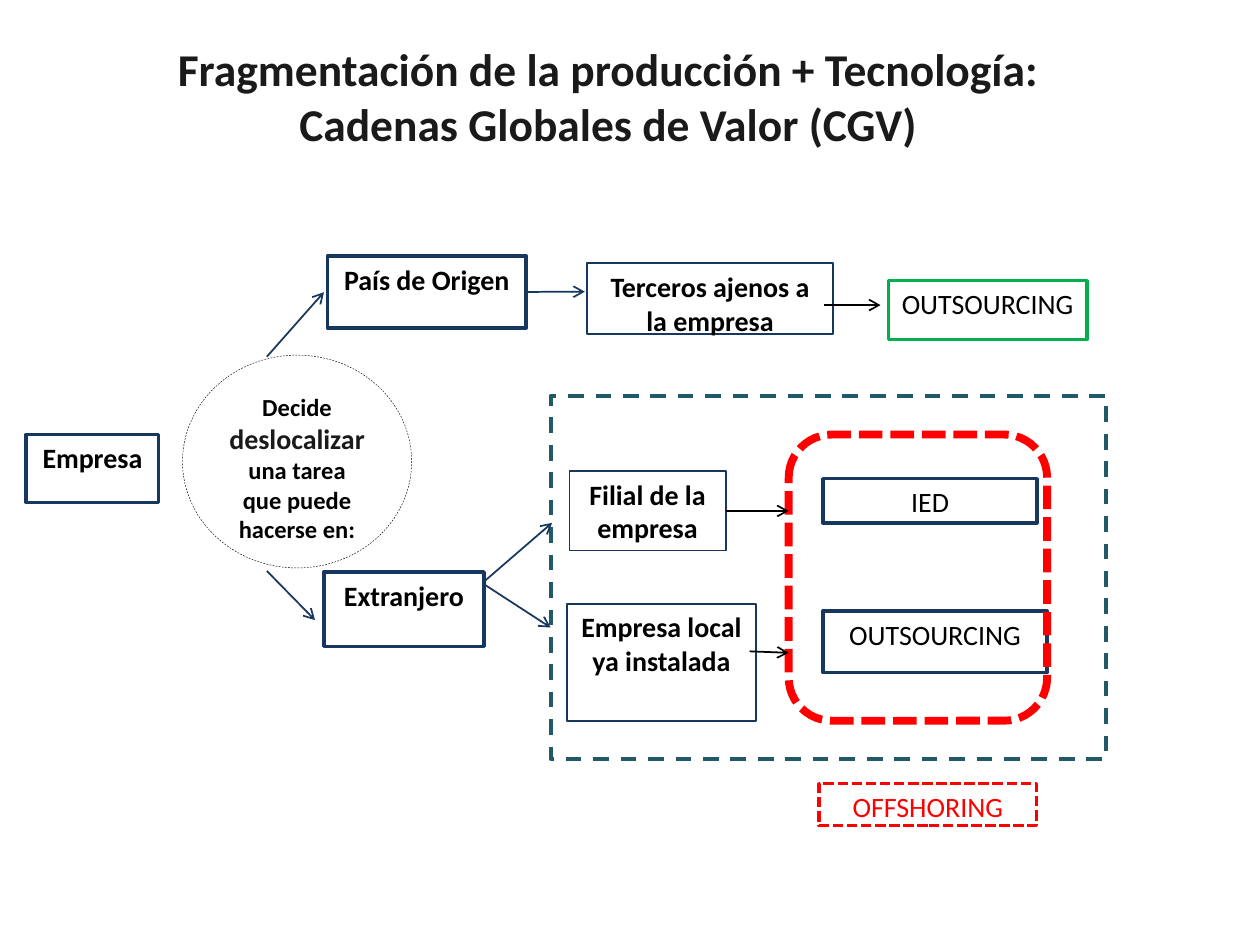
import pptx
import pptx.util
import pptx.dml.color
import pptx.enum.dml
import pptx.enum.shapes
import pptx.enum.text
import pptx.oxml
import pptx.oxml.ns
from pptx.util import Cm, Pt

RGBColor = pptx.dml.color.RGBColor
SHAPE = pptx.enum.shapes.MSO_SHAPE
DASH = pptx.enum.dml.MSO_LINE
CENTER = pptx.enum.text.PP_ALIGN.CENTER

NAVY = RGBColor(0x17, 0x37, 0x5E)
TEAL = RGBColor(0x21, 0x59, 0x68)
GREEN = RGBColor(0x00, 0xB0, 0x50)
RED = RGBColor(0xFF, 0x00, 0x00)
BLACK = RGBColor(0x00, 0x00, 0x00)
CHARCOAL = RGBColor(0x1A, 0x1A, 0x1A)
FONT = "Calibri"
RIGHT_SIDE = 3


def style_paragraph(paragraph, size, color, bold):
    paragraph.alignment = CENTER
    paragraph.font.name = FONT
    paragraph.font.bold = bold
    paragraph.font.color.rgb = color
    if size:
        paragraph.font.size = Pt(size)


def add_outline(slide, region, box, kind=SHAPE.RECTANGLE, color=NAVY, weight=2, dash=None):
    """Add an unfilled shape; box is left, top, width, height within the region (cm)."""
    left, top, width, height = box
    shape = slide.shapes.add_shape(
        kind, Cm(region[0] + left), Cm(region[1] + top), Cm(width), Cm(height))
    shape.shadow.inherit = False
    shape.fill.background()
    shape.line.color.rgb = color
    shape.line.width = Pt(weight)
    if dash:
        shape.line.dash_style = dash
    shape.text_frame.word_wrap = True
    shape.text_frame.vertical_anchor = pptx.enum.text.MSO_ANCHOR.TOP
    return shape


def add_label(slide, region, box, text, bold=True, text_color=BLACK, **outline):
    shape = add_outline(slide, region, box, **outline)
    paragraph = shape.text_frame.paragraphs[0]
    paragraph.text = text
    style_paragraph(paragraph, 16, text_color, bold)
    return shape


def add_arrow(slide, region, start, end, color=NAVY, source=None):
    """Add an arrow; it is joined to the right side of source when one is given."""
    connector = slide.shapes.add_connector(
        pptx.enum.shapes.MSO_CONNECTOR.STRAIGHT,
        Cm(region[0] + start[0]), Cm(region[1] + start[1]),
        Cm(region[0] + end[0]), Cm(region[1] + end[1]))
    if source is not None:
        connector.begin_connect(source, RIGHT_SIDE)
    connector.line.color.rgb = color
    connector.line.width = Pt(1)
    line = connector.line._get_or_add_ln()
    line.append(pptx.oxml.parse_xml(
        '<a:tailEnd %s type="arrow"/>' % pptx.oxml.ns.nsdecls("a")))
    line.addnext(pptx.oxml.parse_xml(
        "<a:effectLst %s/>" % pptx.oxml.ns.nsdecls("a")))


def add_title(slide, left, top, width, height):
    frame = slide.shapes.add_textbox(Cm(left), Cm(top), Cm(width), Cm(height)).text_frame
    frame.word_wrap = True
    frame.text = ("Fragmentación de la producción + Tecnología:\n"
                  "Cadenas Globales de Valor (CGV)")
    for paragraph in frame.paragraphs:
        style_paragraph(paragraph, 26, CHARCOAL, True)


def add_decision(slide, left, top):
    region = (left, top)
    add_label(slide, region, (0, 2.87, 2.67, 1.37), "Empresa")

    # Decision circle
    circle = add_outline(slide, region, (3.15, 1.27, 4.62, 4.29), kind=SHAPE.OVAL,
                         color=BLACK, weight=0.25, dash=DASH.DASH)
    paragraph = circle.text_frame.paragraphs[0]
    style_paragraph(paragraph, None, BLACK, True)
    for text, size, color in (("Decide ", 14, BLACK),
                              ("deslocalizar ", 16, CHARCOAL),
                              ("una tarea que puede hacerse en:", 14, BLACK)):
        run = paragraph.add_run()
        run.text = text
        run.font.size = Pt(size)
        run.font.color.rgb = color

    # Arrows to both branches
    add_arrow(slide, region, (4.85, 1.3), (6, 0))
    add_arrow(slide, region, (4.85, 5.62), (5.82, 6.61))


def add_home_branch(slide, left, top):
    region = (left, top)
    home = add_label(slide, region, (0, 0, 4.01, 1.45), "País de Origen")
    add_label(slide, region, (5.24, 0.15, 4.95, 1.42), "Terceros ajenos a la empresa",
              weight=1)
    add_label(slide, region, (11.31, 0.5, 4, 1.19), "OUTSOURCING", bold=False, color=GREEN)
    add_arrow(slide, region, (4.01, 0.72), (5.19, 0.72), source=home)
    add_arrow(slide, region, (10.01, 0.99), (11.15, 0.99), color=BLACK)


def add_abroad_branch(slide, left, top):
    region = (left, top)
    add_label(slide, region, (0, 3.55, 3.23, 1.5), "Extranjero")

    # Options abroad and their outcomes
    subsidiary = add_label(slide, region, (4.95, 1.52, 3.15, 1.6), "Filial de la empresa",
                           weight=1)
    add_label(slide, region, (4.9, 4.19, 3.81, 2.36), "Empresa local ya instalada",
              weight=1)
    add_label(slide, region, (10.06, 1.67, 4.32, 0.89), "IED", bold=False)
    add_label(slide, region, (10.06, 4.34, 4.52, 1.24), "OUTSOURCING", bold=False)

    # Frames around the options and the outcomes
    add_outline(slide, region, (4.57, 0, 11.2, 7.32), color=TEAL, weight=2.25,
                dash=DASH.DASH)
    add_outline(slide, region, (9.37, 0.78, 5.21, 5.77), kind=SHAPE.ROUNDED_RECTANGLE,
                color=RED, weight=4.5, dash=DASH.SQUARE_DOT)
    offshoring = add_label(slide, region, (9.98, 7.82, 4.39, 0.84), "OFFSHORING",
                           bold=False, text_color=RED, color=RED)
    line = offshoring.line._get_or_add_ln()
    line.append(pptx.oxml.parse_xml(
        '<a:prstDash %s val="sysDash"/>' % pptx.oxml.ns.nsdecls("a")))

    # Arrows
    add_arrow(slide, region, (3.22, 3.75), (4.6, 2.56))
    add_arrow(slide, region, (3.2, 3.78), (4.57, 4.67))
    add_arrow(slide, region, (8.1, 2.32), (9.37, 2.32), color=BLACK, source=subsidiary)
    add_arrow(slide, region, (8.58, 5.15), (9.37, 5.18), color=BLACK)


def main():
    presentation = pptx.Presentation()
    presentation.slide_width = Cm(25.4)
    presentation.slide_height = Cm(19.05)
    slide = presentation.slides.add_slide(presentation.slide_layouts[6])
    add_title(slide, 0.84, 0.71, 22.86, 2.49)
    add_decision(slide, 0.53, 5.89)
    add_home_branch(slide, 6.6, 5.16)
    add_abroad_branch(slide, 6.53, 7.98)
    presentation.save("out.pptx")


if __name__ == "__main__":
    main()
